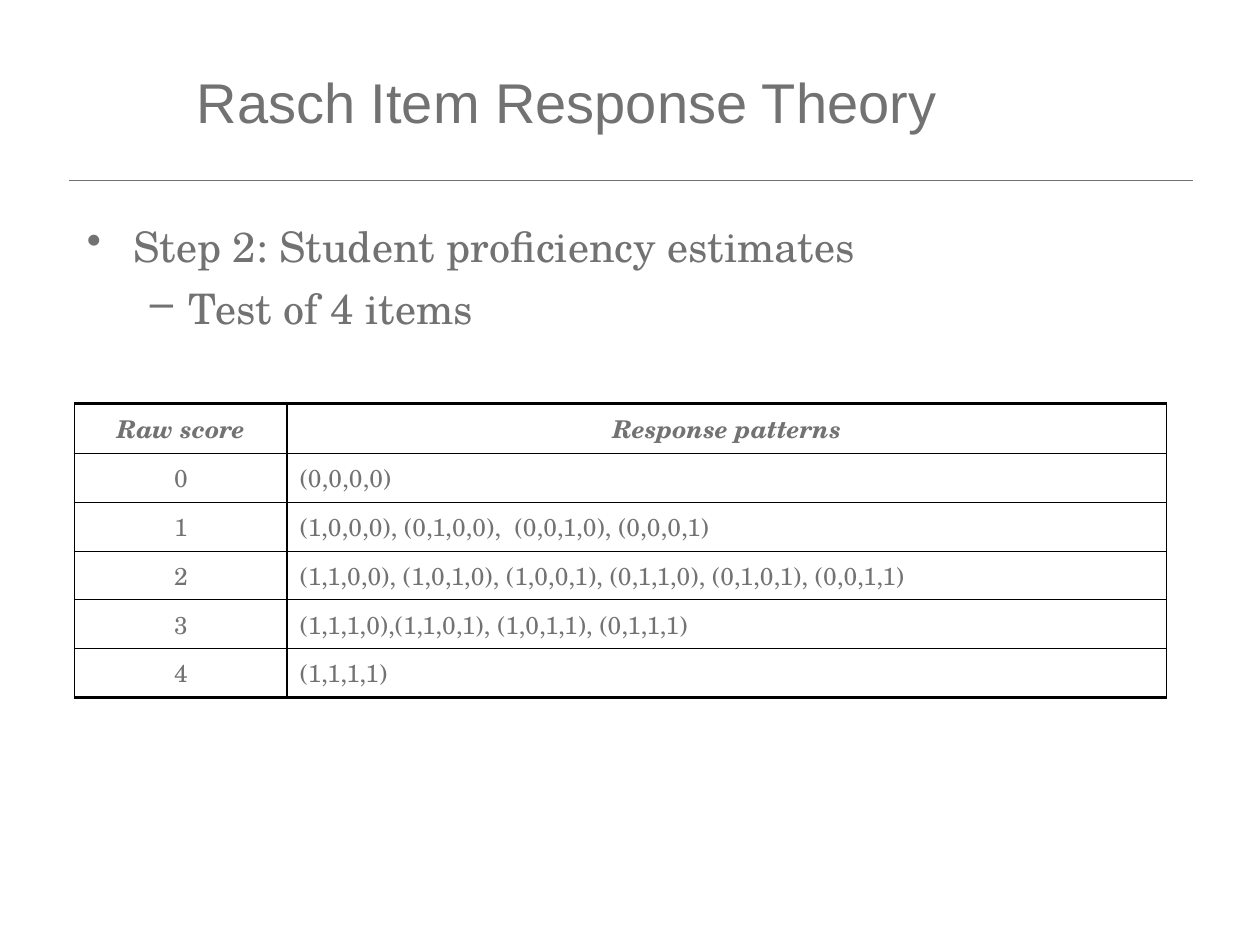
from lxml import etree
from pptx import Presentation
from pptx.dml.color import RGBColor
from pptx.enum.shapes import MSO_CONNECTOR
from pptx.enum.text import MSO_ANCHOR, PP_ALIGN
from pptx.oxml.ns import qn
from pptx.util import Cm, Pt

LEFT, CENTER = PP_ALIGN.LEFT, PP_ALIGN.CENTER
MIDDLE = MSO_ANCHOR.MIDDLE
STRAIGHT = MSO_CONNECTOR.STRAIGHT

TITLE = "Rasch Item Response Theory"
BULLETS = [
    {"text": "Step 2: Student proficiency estimates", "level": 0, "mark": "•",
     "margin": 0.94, "hanging": 0.94, "before": 0},
    {"text": "Test of 4 items", "level": 1, "mark": "–",
     "margin": 2.06, "hanging": 0.79, "before": 6.8},
]
ROWS = [
    ("Raw score", "Response patterns"),
    ("0", "(0,0,0,0)"),
    ("1", "(1,0,0,0), (0,1,0,0),  (0,0,1,0), (0,0,0,1)"),
    ("2", "(1,1,0,0), (1,0,1,0), (1,0,0,1), (0,1,1,0), (0,1,0,1), (0,0,1,1)"),
    ("3", "(1,1,1,0),(1,1,0,1), (1,0,1,1), (0,1,1,1)"),
    ("4", "(1,1,1,1)"),
]
COLUMN_WIDTHS = (4.29, 17.73)
ROW_HEIGHT = 0.98

THEME = {
    "text": RGBColor(0x72, 0x72, 0x72),
    "border": "000000",
    "title_font": "Arial",
    "body_font": "TeX Gyre Schola",
    "title_size": 32,
    "body_size": 24,
    "table_size": 14,
    "thin": 0.75,
    "inner": 1,
    "thick": 2,
}


def format_font(paragraph, family, size, emphasis=False):
    for run in paragraph.runs:
        run.font.name = THEME[family]
        run.font.size = Pt(THEME[size])
        run.font.color.rgb = THEME["text"]
        run.font.bold = run.font.italic = emphasis


def add_title(slide):
    title = slide.shapes.title
    title.left, title.top, title.width, title.height = Cm(3.71), Cm(0.91), Cm(18.01), Cm(2.26)
    title.text_frame.text = TITLE
    title.text_frame.vertical_anchor = MIDDLE
    paragraph = title.text_frame.paragraphs[0]
    paragraph.alignment = LEFT
    format_font(paragraph, "title_font", "title_size")


def add_rule(slide):
    rule = slide.shapes.add_connector(STRAIGHT, Cm(1.4), Cm(3.63), Cm(24.05), Cm(3.63))
    rule.line.color.rgb = THEME["text"]
    rule.line.width = Pt(0.5)
    etree.SubElement(rule._element.spPr, qn("a:effectLst"))


def add_bullets(slide):
    box = slide.shapes.add_textbox(Cm(1.5), Cm(4.32), Cm(20.75), Cm(3.2))
    frame = box.text_frame
    frame.word_wrap = True
    frame.text = "\n".join(bullet["text"] for bullet in BULLETS)
    for paragraph, bullet in zip(frame.paragraphs, BULLETS):
        properties = paragraph._p.get_or_add_pPr()
        properties.set("marL", str(Cm(bullet["margin"])))
        properties.set("indent", str(-Cm(bullet["hanging"])))
        etree.SubElement(properties, qn("a:buChar"), char=bullet["mark"])
        paragraph.level = bullet["level"]
        paragraph.space_before = Pt(bullet["before"])
        format_font(paragraph, "body_font", "body_size")


def set_borders(cell, widths):
    properties = cell._tc.get_or_add_tcPr()
    for side, width in widths.items():
        line = etree.SubElement(properties, qn(f"a:ln{side}"), w=str(Pt(width)))
        fill = etree.SubElement(line, qn("a:solidFill"))
        etree.SubElement(fill, qn("a:srgbClr"), val=THEME["border"])


def add_score_table(slide):
    last = len(ROWS) - 1
    frame = slide.shapes.add_table(
        len(ROWS), len(COLUMN_WIDTHS), Cm(1.5), Cm(8.13),
        Cm(sum(COLUMN_WIDTHS)), Cm(ROW_HEIGHT * len(ROWS)))
    table = frame.table
    table.first_row = table.horz_banding = False
    for column, width in zip(table.columns, COLUMN_WIDTHS):
        column.width = Cm(width)
    thin, inner, thick = THEME["thin"], THEME["inner"], THEME["thick"]
    for row, texts in enumerate(ROWS):
        table.rows[row].height = Cm(ROW_HEIGHT)
        header = row == 0
        top = {0: thick, 1: inner}.get(row, thin)
        bottom = {0: inner, last: thick}.get(row, thin)
        for column, text in enumerate(texts):
            cell = table.cell(row, column)
            cell.text_frame.text = text
            cell.vertical_anchor = MIDDLE
            left, right = (thin, inner) if column == 0 else (inner, thin)
            set_borders(cell, {"L": left, "R": right, "T": top, "B": bottom})
            cell.fill.background()
            paragraph = cell.text_frame.paragraphs[0]
            paragraph.alignment = CENTER if header or column == 0 else LEFT
            format_font(paragraph, "body_font", "table_size", header)


def main():
    presentation = Presentation()
    presentation.slide_width, presentation.slide_height = Cm(25.4), Cm(19.05)
    slide = presentation.slides.add_slide(presentation.slide_layouts[5])
    add_rule(slide)
    add_score_table(slide)
    add_title(slide)
    add_bullets(slide)
    presentation.save("out.pptx")


if __name__ == "__main__":
    main()
